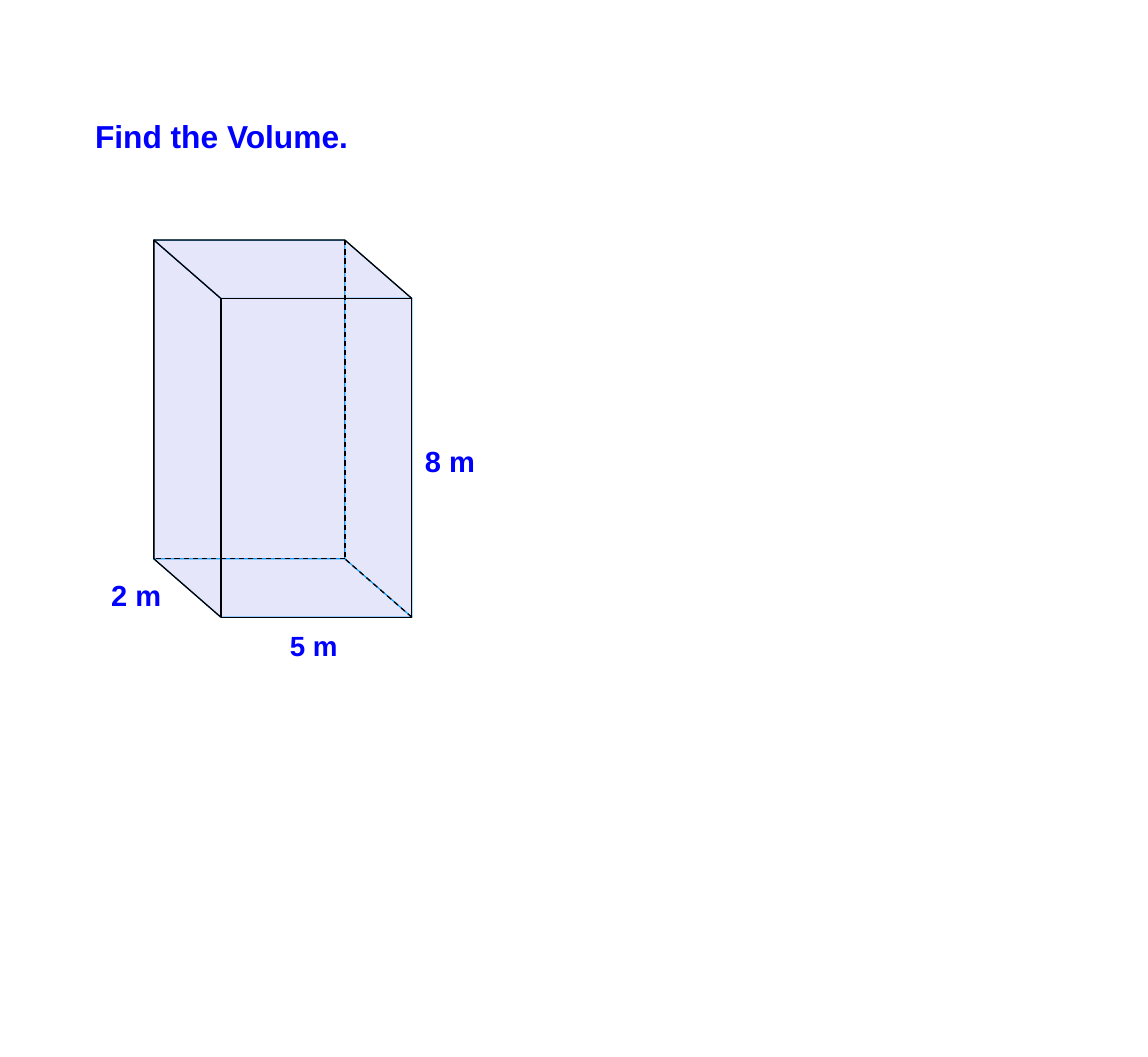
"""Build a slide asking for the volume of a rectangular prism."""
from dataclasses import dataclass

from lxml import etree
from pptx import Presentation
from pptx import util as u
from pptx.dml.color import RGBColor
from pptx.enum import dml, shapes, text
from pptx.oxml import ns

COLORS = {"text": "0000FF", "face": "E6E6FA", "seam": "0099FF", "edge": "000000"}
FONT = "Arial"

LEFT, TOP = 4.11, 6.41
WIDTH, HEIGHT = 5.1, 8.51
DEPTH_X, DEPTH_Y = 1.79, 1.56

BACK_L, BACK_R = LEFT, LEFT + WIDTH
FRONT_L, FRONT_R = BACK_L + DEPTH_X, BACK_R + DEPTH_X
BACK_T, BACK_B = TOP, TOP + HEIGHT
FRONT_T, FRONT_B = BACK_T + DEPTH_Y, BACK_B + DEPTH_Y

POINTS = {
    "back_tl": (BACK_L, BACK_T), "back_tr": (BACK_R, BACK_T),
    "back_bl": (BACK_L, BACK_B), "back_br": (BACK_R, BACK_B),
    "front_tl": (FRONT_L, FRONT_T), "front_tr": (FRONT_R, FRONT_T),
    "front_bl": (FRONT_L, FRONT_B), "front_br": (FRONT_R, FRONT_B),
    "cross_t": (BACK_R, FRONT_T), "cross_b": (FRONT_L, BACK_B),
}


@dataclass(frozen=True)
class Outline:
    points: str
    filled: bool = False


@dataclass(frozen=True)
class Edge:
    start: str
    end: str
    dashed: bool = False


@dataclass(frozen=True)
class Label:
    words: str
    left: float
    top: float
    width: float
    height: float
    size: int


OUTLINES = [
    Outline("back_tl front_tl cross_b back_bl", True),
    Outline("front_tl back_tl back_tr cross_t", True),
    Outline("front_tr cross_t back_tr", True),
    Outline("front_tr front_br back_br cross_t", True),
    Outline("cross_t back_br cross_b front_tl", True),
    Outline("back_bl cross_b front_bl", True),
    Outline("front_bl cross_b back_br front_br", True),
    Outline("back_tl back_tr front_tr"),
    Outline("front_tl front_tr front_br front_bl"),
    Outline("front_bl back_bl back_tl front_tl"),
]

EDGES = [
    Edge("front_tl", "front_bl"),
    Edge("back_br", "back_bl", True),
    Edge("front_br", "back_br", True),
    Edge("back_tr", "back_br", True),
]

LABELS = [
    Label("Find the Volume.", 2.29, 3, 8.81, 1.3, 24),
    Label("5 m", 7.49, 16.66, 3.15, 1.14, 21),
    Label("8 m", 11.1, 11.71, 3.23, 1.19, 22),
    Label("2 m", 2.72, 15.29, 3.23, 1.19, 22),
]


def rgb(name: str) -> RGBColor:
    """Return a named colour."""
    return RGBColor.from_string(COLORS[name])


def place(name: str) -> tuple[u.Length, u.Length]:
    """Return a named point of the prism as lengths."""
    x, y = POINTS[name]
    return u.Cm(x), u.Cm(y)


def draw_outline(s, outline: Outline) -> None:
    """Draw a filled face or an open run of edges."""
    first, *rest = [place(name) for name in outline.points.split()]
    builder = s.shapes.build_freeform(*first)
    builder.add_line_segments(rest, close=outline.filled)
    sp = builder.convert_to_shape()
    sp.shadow.inherit = False
    if outline.filled:
        sp.fill.solid()
        sp.fill.fore_color.rgb = rgb("face")
    else:
        sp.fill.background()
    sp.line.color.rgb = rgb("seam" if outline.filled else "edge")
    sp.line.width = u.Pt(0 if outline.filled else 1)


def draw_edge(s, edge: Edge) -> None:
    """Draw one straight edge."""
    cxn = s.shapes.add_connector(
        shapes.MSO_CONNECTOR.STRAIGHT, *place(edge.start), *place(edge.end))
    cxn.line.color.rgb = rgb("edge")
    cxn.line.width = u.Pt(1)
    if edge.dashed:
        cxn.line.dash_style = dml.MSO_LINE.DASH
    etree.SubElement(cxn._element.spPr, ns.qn("a:effectLst"))


def draw_label(s, label: Label) -> None:
    """Draw one line of bold text."""
    sp = s.shapes.add_textbox(u.Cm(label.left), u.Cm(label.top),
                              u.Cm(label.width), u.Cm(label.height))
    tf = sp.text_frame
    tf.word_wrap = True
    tf.auto_size = text.MSO_AUTO_SIZE.SHAPE_TO_FIT_TEXT
    r = tf.paragraphs[0].add_run()
    r.text = label.words
    r.font.name = FONT
    r.font.size = u.Pt(label.size)
    r.font.bold = True
    r.font.color.rgb = rgb("text")


def main() -> None:
    """Create and save the presentation."""
    prs = Presentation()
    prs.slide_width, prs.slide_height = u.Cm(30.66), u.Cm(28.22)
    s = prs.slides.add_slide(prs.slide_layouts[6])
    for outline in OUTLINES:
        draw_outline(s, outline)
    for edge in EDGES:
        draw_edge(s, edge)
    for label in LABELS:
        draw_label(s, label)
    prs.save("out.pptx")


if __name__ == "__main__":
    main()
